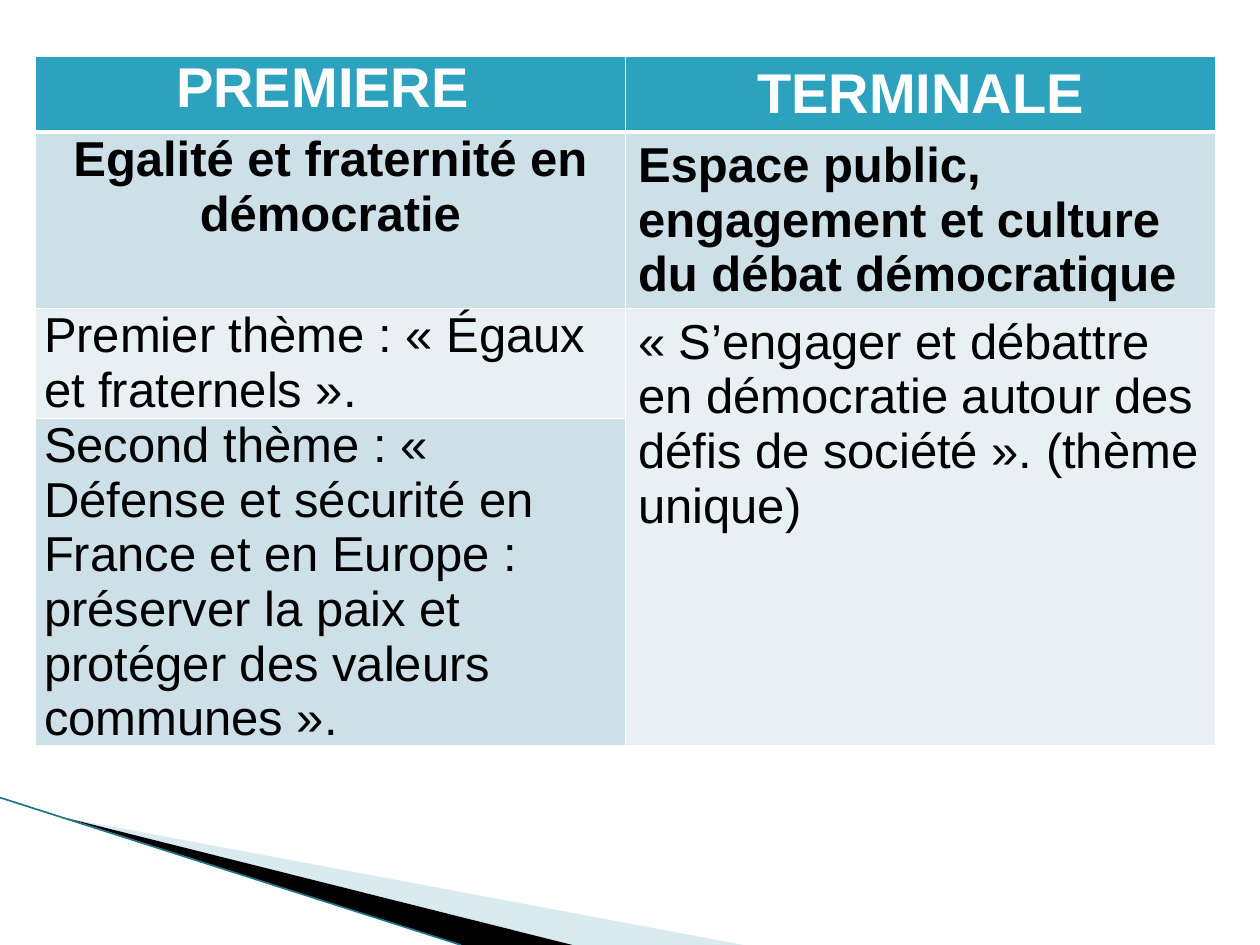
import pptx
import pptx.dml.color
import pptx.enum.shapes
import pptx.enum.text
import pptx.oxml
import pptx.oxml.ns
import pptx.util
from lxml import etree

WIDE, HIGH = pptx.util.Inches(10), pptx.util.Inches(7.5)
HUES = {"head": "2DA2BF", "band": "CDE0E8", "pale": "E8F0F4", "white": "FFFFFF",
        "black": "000000", "wing": "A0CBDC", "edge": "1F768A"}
ROWS = [0.58, 1.4, 0.87, 2.6]
MID = pptx.enum.text.PP_ALIGN.CENTER
LEFT = pptx.enum.text.PP_ALIGN.LEFT
# row, column, text, fill, size, bold, alignment
CELLS = [
    (0, 0, "PREMIERE ", "head", 32, True, MID),
    (0, 1, "TERMINALE", "head", 32, True, MID),
    (1, 0, "Egalité et fraternité en démocratie", "band", 28, True, MID),
    (1, 1, "Espace public, engagement et culture du débat démocratique",
     "band", 28, True, LEFT),
    (2, 0, "Premier thème : « Égaux et fraternels ».", "pale", 28, False, LEFT),
    (2, 1, "« S’engager et débattre en démocratie autour des défis de société ». "
           "(thème unique)", "pale", 28, False, LEFT),
    (3, 0, "Second thème : « Défense et sécurité en France et en Europe : "
           "préserver la paix et protéger des valeurs communes ».",
     "band", 28, False, LEFT),
]


def tint(fill, hue):
    fill.solid()
    fill.fore_color.rgb = pptx.dml.color.RGBColor.from_string(HUES[hue])


def rule(cell, row):
    """Draw white borders, thicker between the header and the body."""
    props = cell._tc.get_or_add_tcPr()
    for side in "LRTB":
        thick = (row, side) in ((0, "B"), (1, "T"))
        props.append(pptx.oxml.parse_xml(
            f'<a:ln{side} {pptx.oxml.ns.nsdecls("a")} '
            f'w="{pptx.util.Pt(3 if thick else 1)}"><a:solidFill>'
            f'<a:srgbClr val="{HUES["white"]}"/></a:solidFill></a:ln{side}>'))


def corner(slide, box):
    """Bottom-left wedge; points are shares of the box."""
    left, top, wide, high = box

    def spot(x, y):
        return round(left + x * wide), round(top + y * high)

    # Filled wings
    wings = [("wing", 40, [(0.09, 0.14), (1, 1), (0.77, 1)]),
             ("black", 100, [(0.09, 0.14), (0.77, 1), (0.62, 1)])]
    for hue, alpha, points in wings:
        first, *rest = [spot(*point) for point in points]
        pen = slide.shapes.build_freeform(*first)
        pen.add_line_segments(rest)
        wing = pen.convert_to_shape()
        wing.shadow.inherit = False
        wing.line.fill.background()
        tint(wing.fill, hue)
        if alpha < 100:
            shade = wing.fill._xPr.find(".//" + pptx.oxml.ns.qn("a:srgbClr"))
            etree.SubElement(shade, pptx.oxml.ns.qn("a:alpha"), val=str(alpha * 1000))

    # Lower edge
    edge = slide.shapes.add_connector(pptx.enum.shapes.MSO_CONNECTOR.STRAIGHT,
                                      *spot(0, 0), *spot(0.62, 1))
    tint(edge.line.fill, "edge")
    edge.line.width = pptx.util.Pt(0.95)
    etree.SubElement(edge._element.spPr, pptx.oxml.ns.qn("a:effectLst"))


def themes(slide, box):
    """Table of themes for the two school years."""
    grid = slide.shapes.add_table(len(ROWS), 2, *box).table
    grid.first_row = grid.horz_banding = False
    for col in grid.columns:
        col.width = box[2] // 2
    for row, share in zip(grid.rows, ROWS):
        row.height = round(box[3] * share / sum(ROWS))
    grid.cell(2, 1).merge(grid.cell(3, 1))

    for row, col, text, hue, size, bold, align in CELLS:
        cell = grid.cell(row, col)
        rule(cell, row)
        tint(cell.fill, hue)
        if col == 0:
            cell.margin_left = cell.margin_right = pptx.util.Inches(0.07)
            cell.margin_top = cell.margin_bottom = 0
        para = cell.text_frame.paragraphs[0]
        para.alignment = align
        run = para.add_run()
        run.text = text
        run.font.name = "Arial"
        run.font.size = pptx.util.Pt(size)
        run.font.bold = bold
        tint(run.font.fill, "white" if row == 0 else "black")
    rule(grid.cell(3, 1), 3)


def main():
    deck = pptx.Presentation()
    deck.slide_width, deck.slide_height = WIDE, HIGH
    slide = deck.slides.add_slide(deck.slide_layouts[6])
    corner(slide, (0, round(HIGH * 0.844), round(WIDE * 0.59), round(HIGH * 0.156)))
    themes(slide, (round(WIDE * 0.028), round(HIGH * 0.06),
                   round(WIDE * 0.937), round(HIGH * 0.727)))
    deck.save("out.pptx")


if __name__ == "__main__":
    main()
